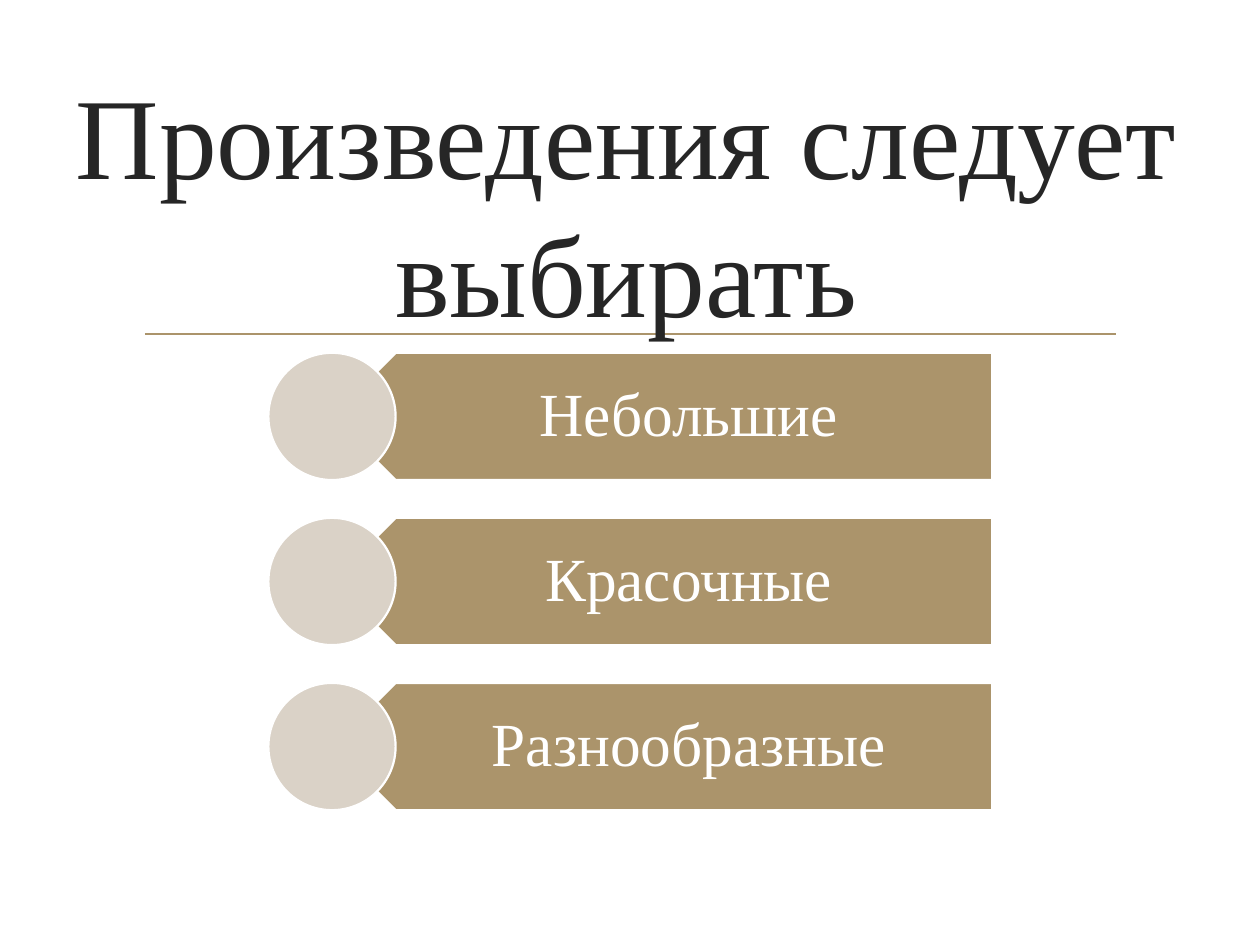
from dataclasses import dataclass

from lxml import etree
from pptx import Presentation
from pptx.dml.color import RGBColor
from pptx.enum.shapes import MSO_CONNECTOR, MSO_SHAPE
from pptx.enum.text import MSO_ANCHOR, PP_ALIGN
from pptx.oxml.ns import qn
from pptx.util import Inches, Pt

STRAIGHT = MSO_CONNECTOR.STRAIGHT
PENTAGON = MSO_SHAPE.PENTAGON
OVAL = MSO_SHAPE.OVAL
MIDDLE = MSO_ANCHOR.MIDDLE
CENTER = PP_ALIGN.CENTER

TITLE = "Произведения следует выбирать"
QUALITIES = ["Небольшие", "Красочные", "Разнообразные"]

FIRST_TOP = 2.8
ROW_STEP = 1.31
ROW_HEIGHT = 1.01
CIRCLE_LEFT = 2.13
BANNER_LEFT = CIRCLE_LEFT + ROW_HEIGHT / 2
BANNER_WIDTH = 5.24
LABEL_LEFT = 2.89
LABEL_WIDTH = BANNER_LEFT + BANNER_WIDTH - LABEL_LEFT
TITLE_MARGINS = (0.1, 0.05, 0.1, 0.05)
LABEL_MARGINS = (0.44, 0.15, 0.27, 0.15)


@dataclass(frozen=True)
class Theme:
    font: str = "Times New Roman"
    title_size: float = 66
    label_size: float = 35
    line_width: float = 1.25
    dark: RGBColor = RGBColor(0x26, 0x26, 0x26)
    accent: RGBColor = RGBColor(0xAB, 0x94, 0x6B)
    pale: RGBColor = RGBColor(0xDA, 0xD2, 0xC7)
    white: RGBColor = RGBColor(0xFF, 0xFF, 0xFF)


THEME = Theme()


def add_rule(slide, left, right, top):
    rule = slide.shapes.add_connector(
        STRAIGHT, Inches(left), Inches(top), Inches(right), Inches(top))
    rule.line.color.rgb = THEME.accent
    rule.line.width = Pt(THEME.line_width)
    etree.SubElement(rule._element.spPr, qn("a:effectLst"))


def add_text(slide, box, text, size, color, margins):
    text_frame = slide.shapes.add_textbox(*map(Inches, box)).text_frame
    text_frame.word_wrap = True
    text_frame.vertical_anchor = MIDDLE
    (text_frame.margin_left, text_frame.margin_top,
     text_frame.margin_right, text_frame.margin_bottom) = map(Inches, margins)
    text_frame.text = text
    paragraph = text_frame.paragraphs[0]
    paragraph.alignment = CENTER
    font = paragraph.runs[0].font
    font.name = THEME.font
    font.size = Pt(size)
    font.color.rgb = color
    return paragraph


def add_figure(slide, kind, box, fill):
    shape = slide.shapes.add_shape(kind, *map(Inches, box))
    shape.shadow.inherit = False
    shape.fill.solid()
    shape.fill.fore_color.rgb = fill
    shape.line.color.rgb = THEME.white
    shape.line.width = Pt(THEME.line_width)
    return shape


def add_quality(slide, top, text):
    banner = add_figure(
        slide, PENTAGON, (BANNER_LEFT, top, BANNER_WIDTH, ROW_HEIGHT), THEME.accent)
    banner.rotation = 180
    label = add_text(
        slide, (LABEL_LEFT, top, LABEL_WIDTH, ROW_HEIGHT), text,
        THEME.label_size, THEME.white, LABEL_MARGINS)
    label.line_spacing = 0.9
    add_figure(slide, OVAL, (CIRCLE_LEFT, top, ROW_HEIGHT, ROW_HEIGHT), THEME.pale)


def main():
    """Build the slide about choosing works."""
    presentation = Presentation()
    presentation.slide_width = Inches(10)
    presentation.slide_height = Inches(7.5)
    slide = presentation.slides.add_slide(presentation.slide_layouts[6])
    add_rule(slide, 1.15, 8.86, 2.65)
    add_text(slide, (0.36, 0.54, 9.22, 2.13), TITLE,
             THEME.title_size, THEME.dark, TITLE_MARGINS)
    for row, quality in enumerate(QUALITIES):
        add_quality(slide, FIRST_TOP + row * ROW_STEP, quality)
    presentation.save("out.pptx")


if __name__ == "__main__":
    main()
